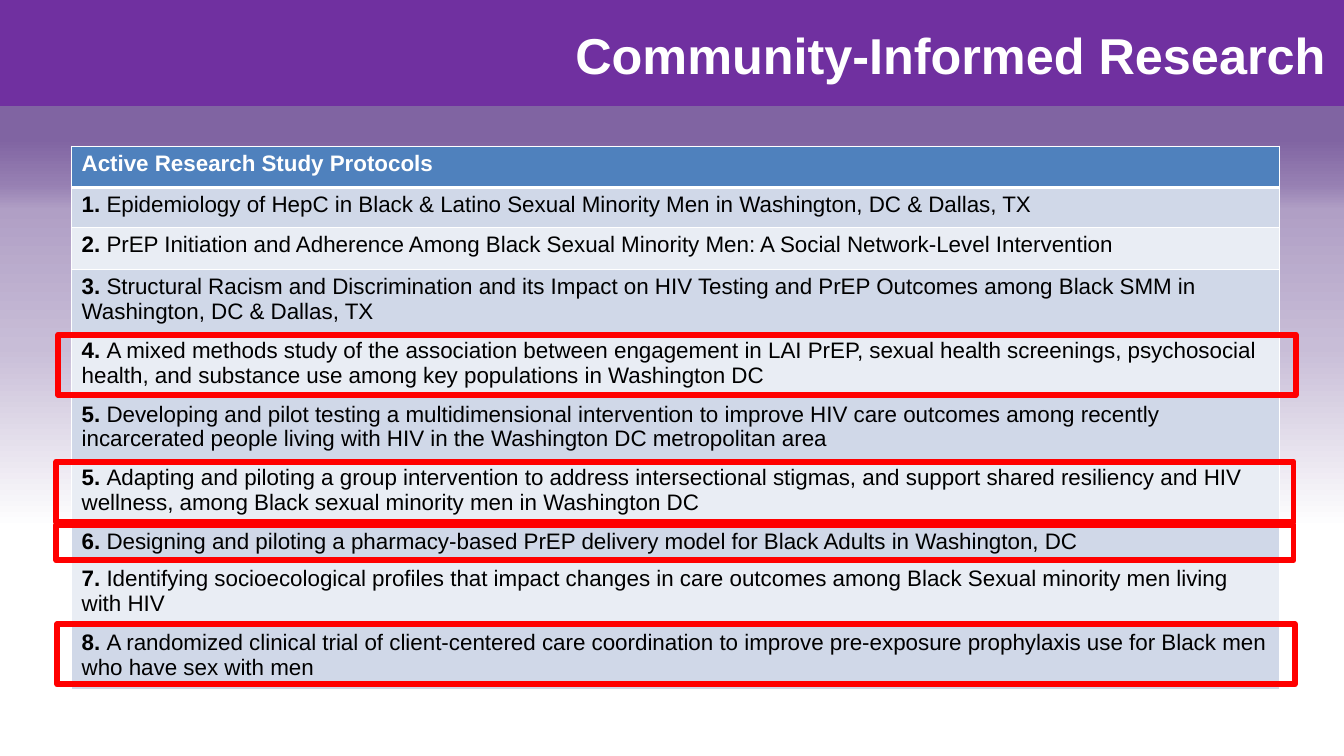
from lxml import etree
from pptx import Presentation
from pptx.dml.color import RGBColor
from pptx.enum.shapes import MSO_SHAPE
from pptx.enum.text import MSO_ANCHOR, PP_ALIGN
from pptx.oxml.ns import qn
from pptx.util import Inches, Pt

RECTANGLE = MSO_SHAPE.RECTANGLE
MIDDLE = MSO_ANCHOR.MIDDLE
RIGHT = PP_ALIGN.RIGHT

COLORS = {
    "white": "FFFFFF", "black": "000000", "banner": "7030A0",
    "header": "4F81BD", "odd": "D0D8E8", "even": "E9EDF4", "mark": "FF0000",
}
# Backdrop gradient, from bottom to top: percent and colour
FADE = [(0, "FFFFFF"), (35, "FFFFFF"), (63, "C8BDD7"), (84, "B09FC5"),
        (88, "967FB2"), (95, "8064A2"), (100, "8064A2")]

TABLE_HEADING = "Active Research Study Protocols"
# Number, study title, row height
STUDIES = [
    ("1. ", "Epidemiology of HepC in Black & Latino Sexual Minority Men in "
     "Washington, DC & Dallas, TX", 0.4),
    ("2. ", "PrEP Initiation and Adherence Among Black Sexual Minority Men: "
     "A Social Network-Level Intervention", 0.41),
    ("3. ", "Structural Racism and Discrimination and its Impact on HIV Testing and "
     "PrEP Outcomes among Black SMM in Washington, DC & Dallas, TX", 0.63),
    ("4. ", "A mixed methods study of the association between engagement in LAI PrEP, "
     "sexual health screenings, psychosocial health, and substance use among key "
     "populations in Washington DC", 0.63),
    ("5. ", "Developing and pilot testing a multidimensional intervention to improve "
     "HIV care outcomes among recently incarcerated people living with HIV in the "
     "Washington DC metropolitan area", 0.63),
    ("5. ", "Adapting and piloting a group intervention to address intersectional "
     "stigmas, and support shared resiliency and HIV wellness, among Black sexual "
     "minority men in Washington DC", 0.63),
    ("6. ", "Designing and piloting a pharmacy-based PrEP delivery model for Black "
     "Adults in Washington, DC", 0.37),
    ("7. ", "Identifying socioecological profiles that impact changes in care outcomes "
     "among Black Sexual minority men living with HIV", 0.63),
    ("8. ", "A randomized clinical trial of client-centered care coordination to "
     "improve pre-exposure prophylaxis use for Black men who have sex with men", 0.63),
]
# Left, top and height of each highlight frame
MARKS = [(0.58, 3.32, 0.6), (0.56, 4.58, 0.6), (0.56, 5.21, 0.35), (0.57, 6.19, 0.6)]


def rgb(name):
    return RGBColor.from_string(COLORS[name])


def add_span(para, text, color, size, bold):
    span = para.add_run()
    span.text = text
    span.font.color.rgb = rgb(color)
    formats = {"name": "Arial", "size": Pt(size), "bold": bold}
    for key, value in formats.items():
        setattr(span.font, key, value)


def add_rectangle(page, left, top, width, height):
    box = page.shapes.add_shape(
        RECTANGLE, Inches(left), Inches(top), Inches(width), Inches(height))
    box.shadow.inherit = False
    box.line.fill.background()
    return box


def add_backdrop(page):
    box = add_rectangle(page, 0, 1.05, 13.33, 6.45)
    box.fill.gradient()
    box.fill.gradient_angle = 90
    stops = box.element.spPr.find(".//" + qn("a:gsLst"))
    for stop in list(stops):
        stops.remove(stop)
    for percent, color in FADE:
        stop = etree.SubElement(stops, qn("a:gs"), pos=str(percent * 1000))
        etree.SubElement(stop, qn("a:srgbClr"), val=color)


def add_banner(page):
    banner = add_rectangle(page, 0, 0, 13.33, 1.05)
    banner.fill.solid()
    banner.fill.fore_color.rgb = rgb("banner")


def add_title(page, text):
    box = page.shapes.add_textbox(Inches(3.48), Inches(0.02), Inches(9.77), Inches(1.03))
    frame = box.text_frame
    frame.word_wrap = True
    frame.vertical_anchor = MIDDLE
    para = frame.paragraphs[0]
    para.alignment = RIGHT
    add_span(para, text, "white", 36, True)


def set_borders(cell, top, bottom):
    properties = cell._tc.get_or_add_tcPr()
    for side, points in {"L": 1, "R": 1, "T": top, "B": bottom}.items():
        line = etree.SubElement(properties, qn("a:ln" + side), w=str(Pt(points)))
        fill = etree.SubElement(line, qn("a:solidFill"))
        etree.SubElement(fill, qn("a:srgbClr"), val=COLORS["white"])


def fill_cell(cell, color, spans, top=1, bottom=1):
    set_borders(cell, top, bottom)
    cell.fill.solid()
    cell.fill.fore_color.rgb = rgb(color)
    for text, text_color, bold in spans:
        add_span(cell.text_frame.paragraphs[0], text, text_color, 16, bold)


def add_study_table(page):
    heights = [0.41] + [height for _, _, height in STUDIES]
    table = page.shapes.add_table(
        len(heights), 1, Inches(0.71), Inches(1.45),
        Inches(11.98), Inches(sum(heights))).table
    for row, height in zip(table.rows, heights):
        row.height = Inches(height)
    fill_cell(table.cell(0, 0), "header", [(TABLE_HEADING, "white", True)], bottom=3)
    for index, (number, study, _) in enumerate(STUDIES, 1):
        fill_cell(table.cell(index, 0), "odd" if index % 2 else "even",
                  [(number, "black", True), (study, "black", False)],
                  top=3 if index == 1 else 1)


def add_mark(page, left, top, height):
    mark = add_rectangle(page, left, top, 12.27, height)
    mark.fill.background()
    mark.line.color.rgb = rgb("mark")
    mark.line.width = Pt(4.25)


def main():
    deck = Presentation()
    deck.slide_width = Inches(13.33)
    deck.slide_height = Inches(7.5)
    page = deck.slides.add_slide(deck.slide_layouts[6])

    # Background and title
    add_backdrop(page)
    add_banner(page)
    add_title(page, "Community-Informed Research")

    # Studies and highlight frames
    add_study_table(page)
    for left, top, height in MARKS:
        add_mark(page, left, top, height)

    deck.save("out.pptx")


if __name__ == "__main__":
    main()
